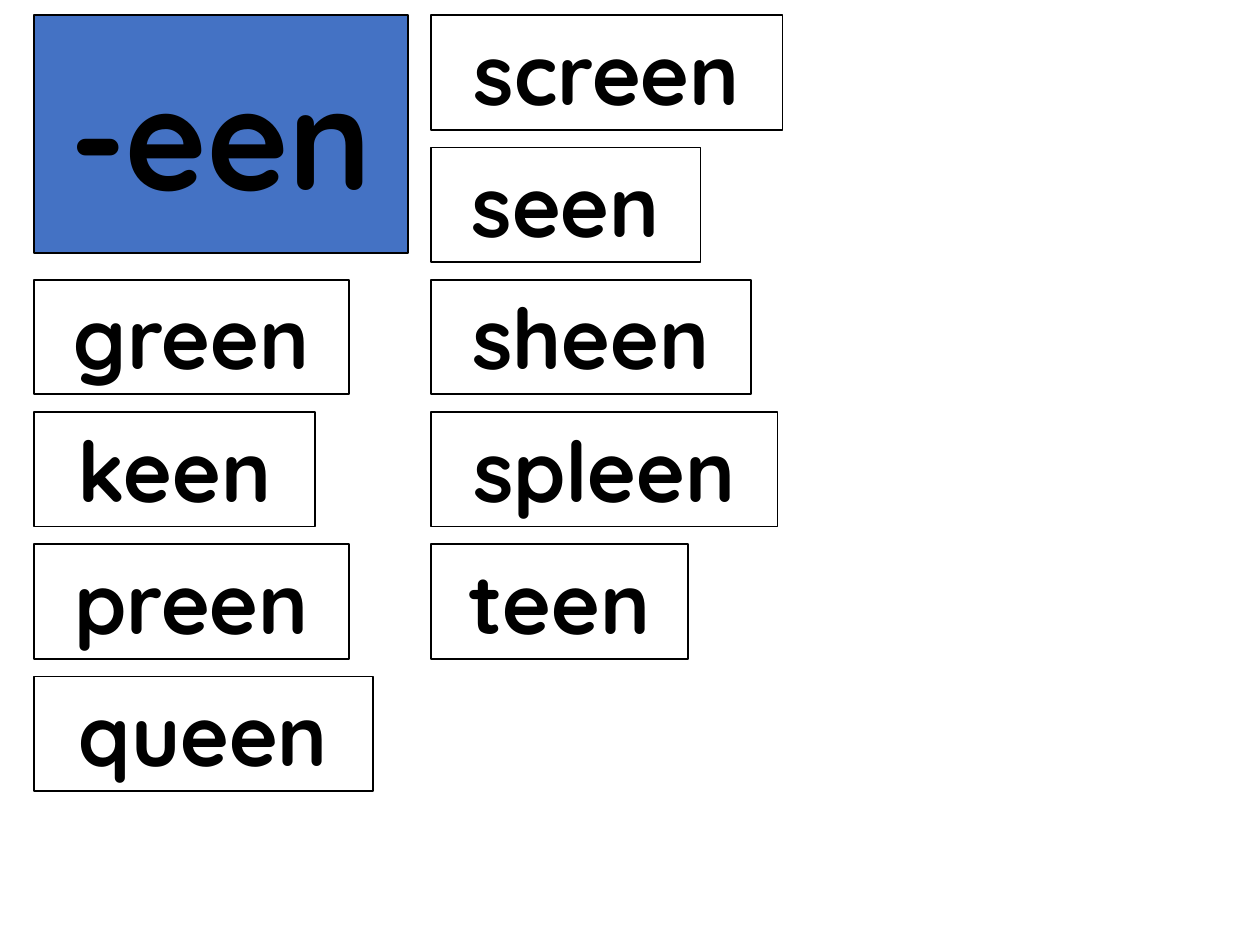
from pptx import Presentation
from pptx.dml.color import RGBColor
from pptx.enum.shapes import MSO_SHAPE
from pptx.enum.text import MSO_ANCHOR, MSO_AUTO_SIZE, PP_ALIGN
from pptx.util import Inches, Pt

RECT = MSO_SHAPE.RECTANGLE
TOP, MIDDLE = MSO_ANCHOR.TOP, MSO_ANCHOR.MIDDLE
FIXED, GROW = MSO_AUTO_SIZE.NONE, MSO_AUTO_SIZE.SHAPE_TO_FIT_TEXT
CENTER = PP_ALIGN.CENTER
BLACK = RGBColor(0x00, 0x00, 0x00)
WHITE = RGBColor(0xFF, 0xFF, 0xFF)
BLUE = RGBColor(0x44, 0x72, 0xC4)
FONT = "Quicksand"
HIGH, STEP = 0.91, 1.05
LEFT = [("green", 2.5), ("keen", 2.23), ("preen", 2.5), ("queen", 2.69)]
RIGHT = [("screen", 2.79), ("seen", 2.14), ("sheen", 2.54),
         ("spleen", 2.75), ("teen", 2.04)]


def put_text(shape, text, size, anchor=TOP, wrap=False, fit=GROW):
    """Write bold centred text into a shape."""
    frame = shape.text_frame
    frame.text = text
    frame.word_wrap = wrap
    frame.auto_size = fit
    frame.vertical_anchor = anchor
    para = frame.paragraphs[0]
    para.alignment = CENTER
    font = para.runs[0].font
    font.name, font.size, font.bold = FONT, Pt(size), True
    font.color.rgb = BLACK


def paint(shape, color):
    """Fill a shape and give it a thin black border."""
    shape.fill.solid()
    shape.fill.fore_color.rgb = color
    shape.line.color.rgb = BLACK
    shape.line.width = Pt(1)


def add_head(slide, text, x, y, w, h):
    """Turn the title into the blue word-ending card."""
    title = slide.shapes.title
    title.left, title.top = Inches(x), Inches(y)
    title.width, title.height = Inches(w), Inches(h)
    paint(title, BLUE)
    put_text(title, text, 80, anchor=MIDDLE, wrap=True, fit=FIXED)


def add_cards(slide, words, x, y):
    """Stack word cards downward from a top-left corner."""
    for row, (word, width) in enumerate(words):
        card = slide.shapes.add_shape(
            RECT, Inches(x), Inches(y + row * STEP), Inches(width), Inches(HIGH))
        card.shadow.inherit = False
        paint(card, WHITE)
        put_text(card, f" {word} ", 48)


def main():
    """Build and save the word family slide."""
    deck = Presentation()
    deck.slide_width, deck.slide_height = Inches(10), Inches(7.5)
    slide = deck.slides.add_slide(deck.slide_layouts[5])
    add_head(slide, "-een", 0.27, 0.12, 2.97, 1.89)
    add_cards(slide, RIGHT, 3.42, 0.12)
    add_cards(slide, LEFT, 0.27, 0.12 + 2 * STEP)
    deck.save("out.pptx")


if __name__ == "__main__":
    main()
